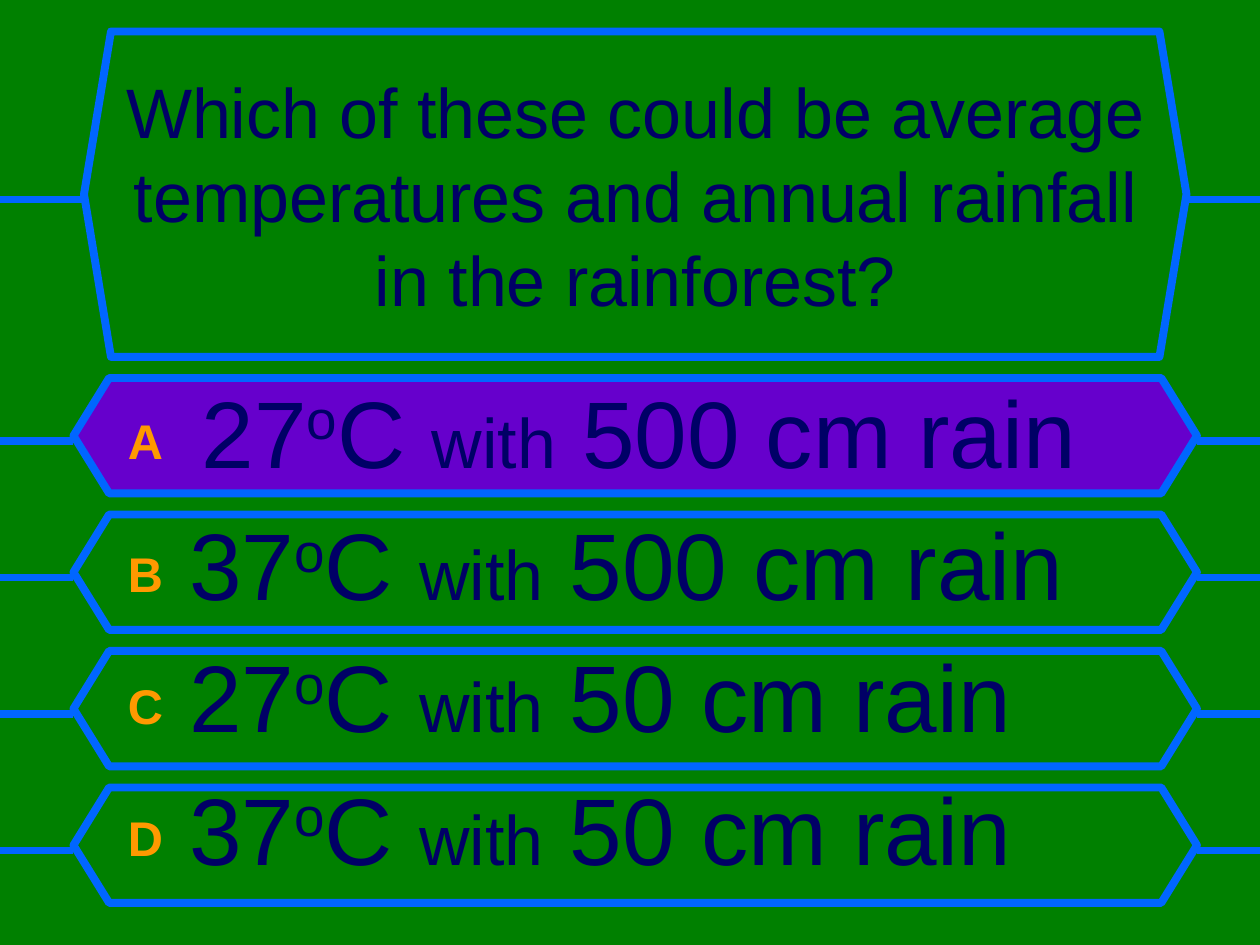
from dataclasses import dataclass

from lxml.etree import SubElement
from pptx import Presentation
from pptx.dml.color import RGBColor
from pptx.enum.shapes import MSO_CONNECTOR, MSO_SHAPE
from pptx.enum.text import MSO_ANCHOR, PP_ALIGN
from pptx.oxml.ns import qn
from pptx.util import Pt

SCALE = 7620  # EMU per px, 120 px to the inch
WIDTH, HEIGHT = 1200, 900


@dataclass(frozen=True)
class Theme:
    font: str = "Arial"
    back: str = "008000"
    chosen: str = "6600CC"
    edge: str = "0066FF"
    text: str = "000066"
    letter: str = "FF9900"
    question_size: int = 40
    letter_size: int = 48
    value_size: int = 54
    word_size: int = 40
    edge_width: float = 4.5


def emu(*lengths):
    return [n * SCALE for n in lengths]


class QuizSlide:
    def __init__(self, prs, theme):
        self.theme = theme
        self.slide = prs.slides.add_slide(prs.slide_layouts[6])
        fill = self.slide.background.fill
        fill.solid()
        fill.fore_color.rgb = RGBColor.from_string(theme.back)

    def edge(self, line):
        line.color.rgb = RGBColor.from_string(self.theme.edge)
        line.width = Pt(self.theme.edge_width)

    def hexagon(self, x, y, w, h, point, color):
        s = self.slide.shapes.add_shape(MSO_SHAPE.HEXAGON, *emu(x, y, w, h))
        s.adjustments[0] = point
        s.shadow.inherit = False
        s.fill.solid()
        s.fill.fore_color.rgb = RGBColor.from_string(color)
        self.edge(s.line)

    def line(self, x1, x2, y):
        c = self.slide.shapes.add_connector(MSO_CONNECTOR.STRAIGHT, *emu(x1, y, x2, y))
        self.edge(c.line)
        SubElement(c._element.spPr, qn("a:effectLst"))

    def side_lines(self, left, right, y):
        self.line(left, 0, y)
        self.line(WIDTH, right, y)

    def text_box(self, x, y, w, h, anchor):
        tf = self.slide.shapes.add_textbox(*emu(x, y, w, h)).text_frame
        tf.word_wrap = True
        tf.vertical_anchor = anchor
        return tf

    def run(self, p, text, size, color=None, bold=False, **attrs):
        r = p.add_run()
        r.text = text
        font = {"name": self.theme.font, "size": Pt(size), "bold": bold}
        for name, value in font.items():
            setattr(r.font, name, value)
        r.font.color.rgb = RGBColor.from_string(color or self.theme.text)
        for name, value in attrs.items():
            r.font._element.set(name, str(value))

    def hanging(self, p, indent):
        pPr = p._p.get_or_add_pPr()
        pPr.set("marL", str(indent * SCALE))
        pPr.set("indent", str(-indent * SCALE))
        before = SubElement(pPr, qn("a:spcBef"))
        SubElement(before, qn("a:spcPct")).set("val", "20000")

    def answer(self, p, letter, degrees, rain, extra_gap):
        t = self.theme
        self.hanging(p, 45)
        self.run(p, letter, t.letter_size, t.letter, bold=True, baseline=10000)
        self.run(p, " ", t.value_size, spc=extra_gap)
        self.run(p, degrees, t.value_size)
        self.run(p, "o", t.value_size, baseline=30000)
        self.run(p, "C ", t.value_size)
        self.run(p, "with", t.word_size)
        self.run(p, f" {rain} cm rain", t.value_size)


def main():
    theme = Theme()
    prs = Presentation()
    prs.slide_width, prs.slide_height = emu(WIDTH, HEIGHT)
    quiz = QuizSlide(prs, theme)

    # Question frame and text
    quiz.hexagon(80, 30, 1050, 310, 0.083, theme.back)
    quiz.side_lines(80, 1130, 190)
    tf = quiz.text_box(100, 50, 1010, 270, MSO_ANCHOR.MIDDLE)
    p = tf.paragraphs[0]
    p.alignment = PP_ALIGN.CENTER
    quiz.run(p, "Which of these could be average temperatures and annual "
                "rainfall in the rainforest?", theme.question_size)

    # Answer frames; the last value widens the gap after the letter (1/100 pt)
    answers = [
        ("A", "27", "500", 700),
        ("B", "37", "500", 0),
        ("C", "27", "50", 0),
        ("D", "37", "50", 0),
    ]
    for i in range(len(answers)):
        y = 360 + 130 * i
        quiz.hexagon(70, y, 1070, 110, 0.309, theme.back if i else theme.chosen)
        quiz.side_lines(70, 1140, y + 60)

    # Answer texts
    tf = quiz.text_box(110, 350, 1000, 520, MSO_ANCHOR.TOP)
    for i, answer in enumerate(answers):
        p = tf.add_paragraph() if i else tf.paragraphs[0]
        quiz.answer(p, *answer)

    prs.save("out.pptx")


if __name__ == "__main__":
    main()
